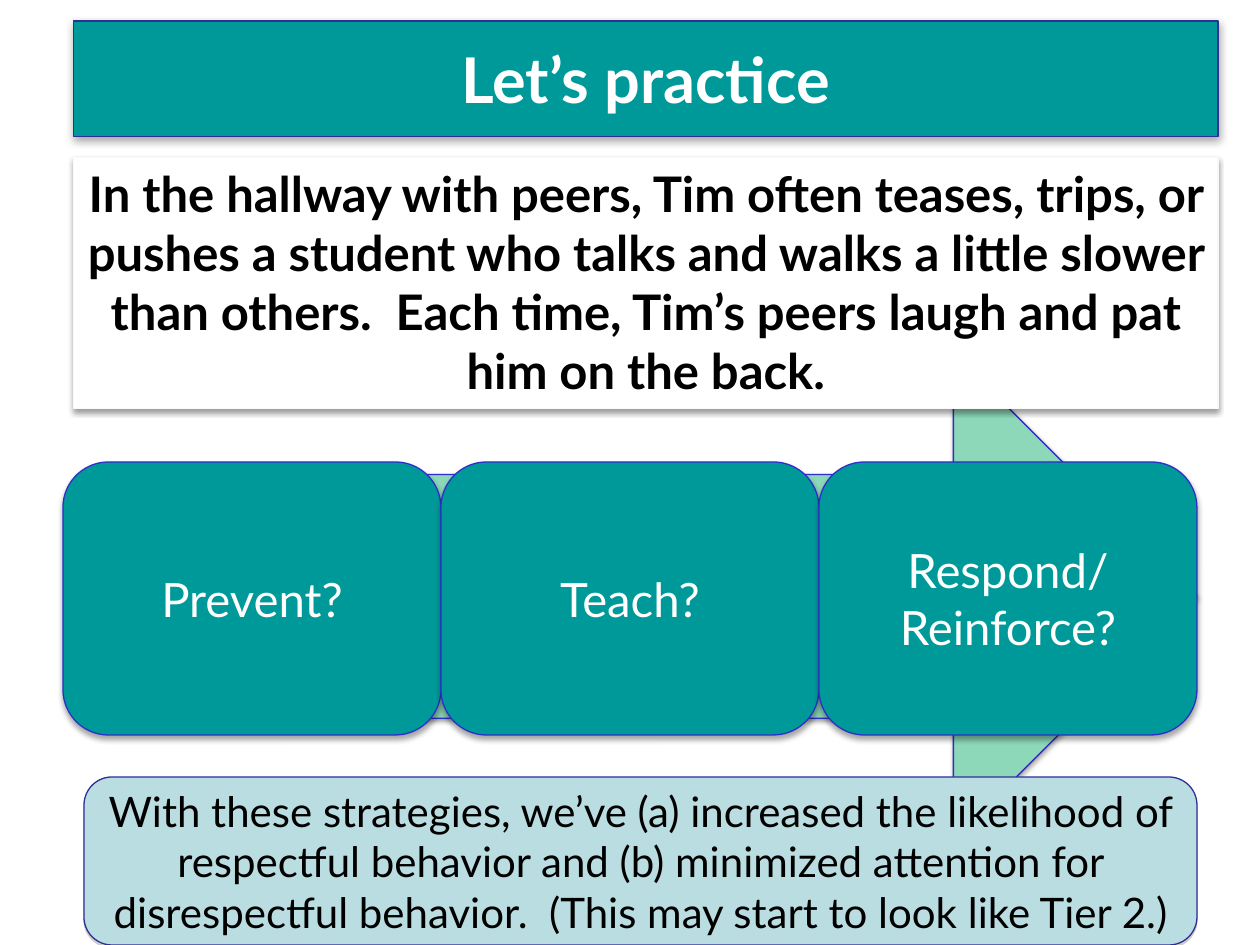
from lxml.etree import SubElement
from pptx import Presentation
from pptx.dml.color import RGBColor
from pptx.enum.shapes import MSO_SHAPE
from pptx.enum.text import MSO_ANCHOR, PP_ALIGN
from pptx.oxml.ns import qn
from pptx.util import Inches, Pt

TEAL, NAVY, BLUE = "009999", "2F2F98", "2E2ECB"
CELL = Inches(1) / 12  # the slide is a grid of 120 columns by 90 rows

deck = Presentation()
deck.slide_width, deck.slide_height = round(120 * CELL), round(90 * CELL)
slide = deck.slides.add_slide(deck.slide_layouts[6])


def color(code):
    return RGBColor.from_string(code)


def block(text, kind, col, row, cols, rows, fill=TEAL, line=BLUE, ink="FFFFFF",
          size=27, bold=False, anchor=MSO_ANCHOR.MIDDLE,
          shade="000000", alpha=35, blur=3.1, drop=1.8):
    """Draw a filled shape with a soft shadow below it and centred text."""
    shape = slide.shapes.add_shape(
        kind, *[round(n * CELL) for n in (col, row, cols, rows)])
    shape.fill.solid()
    shape.fill.fore_color.rgb = color(fill)
    shape.line.color.rgb = color(line)
    shape.line.width = Pt(0.75)

    # Shadow
    shape.shadow.inherit = False
    effects = shape.element.spPr.find(qn("a:effectLst"))
    cast = SubElement(effects, qn("a:outerShdw"), blurRad=str(Pt(blur)),
                      dist=str(Pt(drop)), dir="5400000", rotWithShape="0")
    tint = SubElement(cast, qn("a:srgbClr"), val=shade)
    SubElement(tint, qn("a:alpha"), val=str(alpha * 1000))

    # Text
    if text:
        frame = shape.text_frame
        frame.word_wrap = True
        frame.vertical_anchor = anchor
        para = frame.paragraphs[0]
        para.alignment = PP_ALIGN.CENTER
        run = para.add_run()
        run.text = text
        run.font.name = "Lato"
        run.font.size = Pt(size)
        run.font.bold = bold
        run.font.color.rgb = color(ink)
    return shape


# Title bar
block("Let’s practice", MSO_SHAPE.RECTANGLE, 7, 2, 109, 11,
      line=NAVY, size=36, bold=True, blur=5)

# Arrow behind the three steps
block("", MSO_SHAPE.RIGHT_ARROW, 22.2, 33.6, 91.8, 46.4,
      fill="8CD8B8", alpha=38, drop=1.6)

# Scenario
block("In the hallway with peers, Tim often teases, trips, or pushes a student "
      "who talks and walks a little slower than others.  Each time, Tim’s peers "
      "laugh and pat him on the back.",
      MSO_SHAPE.RECTANGLE, 7, 15, 109, 23.9, fill="FFFFFF", line="F9F9F9",
      ink="000000", size=28, bold=True, anchor=MSO_ANCHOR.TOP, alpha=38, drop=1.6)

# Steps, side by side
for i, step in enumerate(["Prevent?", "Teach?", "Respond/Reinforce?"]):
    block(step, MSO_SHAPE.ROUNDED_RECTANGLE, 6 + 36 * i, 44, 36, 26)

# Summary
block("With these strategies, we’ve (a) increased the likelihood of respectful "
      "behavior and (b) minimized attention for disrespectful behavior.  "
      "(This may start to look like Tier 2.)",
      MSO_SHAPE.ROUNDED_RECTANGLE, 8, 74, 106, 16, fill="BADDE1", line=NAVY,
      ink="000000", size=24, shade="808080", alpha=38, blur=0, drop=1.6)

deck.save("out.pptx")
